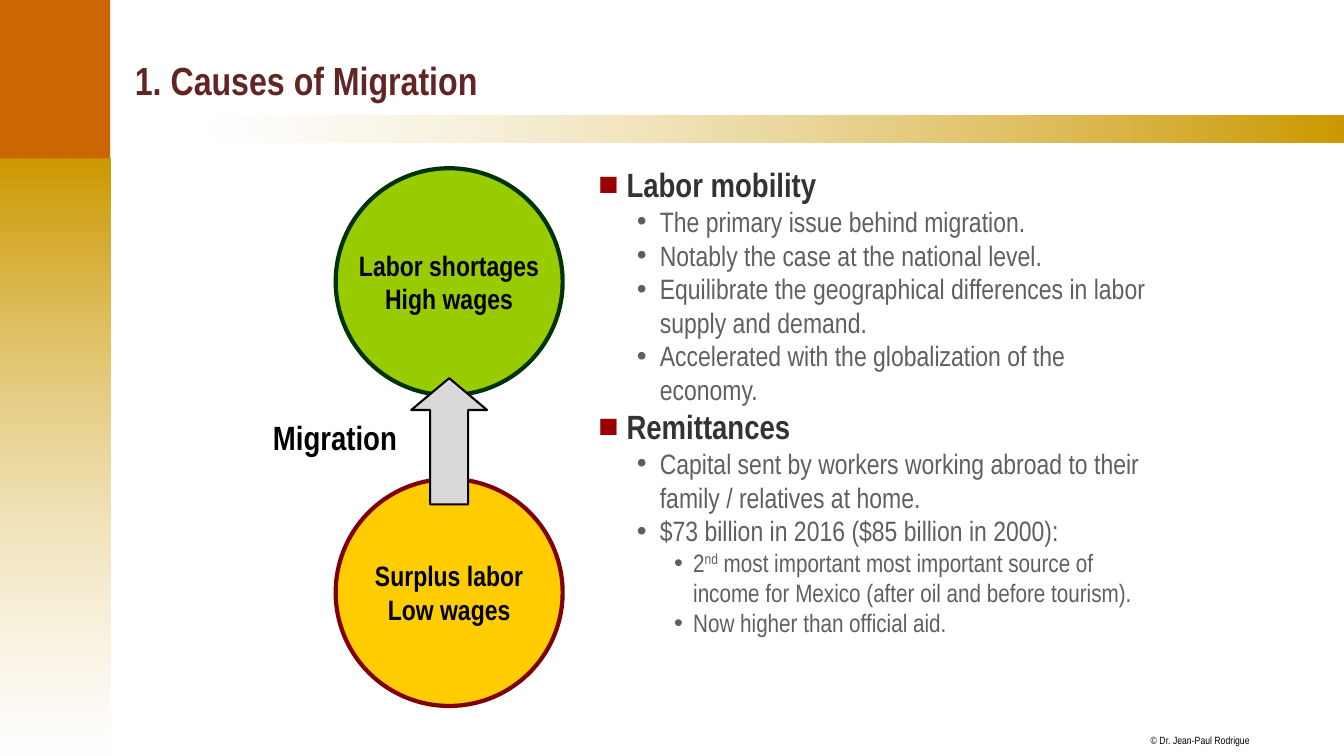
from lxml import etree
from pptx import Presentation
from pptx.dml.color import RGBColor
from pptx.enum.shapes import MSO_SHAPE
from pptx.enum.text import MSO_ANCHOR, PP_ALIGN
from pptx.oxml.ns import qn
from pptx.util import Cm, Pt

RECTANGLE, OVAL, UP_ARROW = MSO_SHAPE.RECTANGLE, MSO_SHAPE.OVAL, MSO_SHAPE.UP_ARROW
TOP, MIDDLE = MSO_ANCHOR.TOP, MSO_ANCHOR.MIDDLE
LEFT, CENTER = PP_ALIGN.LEFT, PP_ALIGN.CENTER
FONT = "Arial Narrow"

TITLE = "1. Causes of Migration"
CREDIT = "© Dr. Jean-Paul Rodrigue"
ARROW_LABEL = "Migration"
OUTLINE = [
    (0, ["Labor mobility"]),
    (1, ["The primary issue behind migration."]),
    (1, ["Notably the case at the national level."]),
    (1, ["Equilibrate the geographical differences in labor supply and demand."]),
    (1, ["Accelerated with the globalization of the economy."]),
    (0, ["Remittances"]),
    (1, ["Capital sent by workers working abroad to their family / relatives at home."]),
    (1, ["$73 billion in 2016 ($85 billion in 2000):"]),
    (2, ["2", "nd", " most important most important source of income for Mexico "
         "(after oil and before tourism)."]),
    (2, ["Now higher than official aid."]),
]
SUPERSCRIPTS = {"nd"}
# size, colour, bold, indent, hanging, bullet, bullet colour
LEVELS = [
    (24, "333333", True, 0.71, 0.71, "■", "990000"),
    (20, "5F5F5F", False, 1.55, 0.58, "•", "5F5F5F"),
    (18, "5F5F5F", False, 2.39, 0.48, "•", "5F5F5F"),
]
CIRCLES = [
    (["Labor shortages", "High wages"], 4.24, "99CC00", "003300"),
    (["Surplus labor", "Low wages"], 12.07, "FFCC00", "800000"),
]
CIRCLE_LEFT, CIRCLE_SIZE = 8.46, 5.72
ARROW_WIDTH, ARROW_HEIGHT, ARROW_TOP = 1.91, 3.18, 9.53
SIDE_WIDTH, SIDE_SPLIT, SLIDE_HEIGHT = 2.82, 3.99, 19.05


def color(code):
    return RGBColor.from_string(code)


def add_figure(page, kind, place, fill=None, line=None, weight=0):
    shape = page.shapes.add_shape(kind, *map(Cm, place))
    shape.shadow.inherit = False
    if fill:
        shape.fill.solid()
        shape.fill.fore_color.rgb = color(fill)
    if line:
        shape.line.color.rgb = color(line)
        shape.line.width = Pt(weight)
    else:
        shape.line.fill.background()
    return shape


def add_gradient(page, place, angle, stops):
    shape = add_figure(page, RECTANGLE, place)
    shape.fill.gradient()
    shape.fill.gradient_angle = angle
    for stop, (code, _) in zip(shape.fill.gradient_stops, stops):
        stop.color.rgb = color(code)
    for element, (_, opacity) in zip(shape.element.iter(qn("a:srgbClr")), stops):
        if opacity < 100:
            etree.SubElement(element, qn("a:alpha"), val=str(opacity * 1000))


def add_span(para, text, size, code, bold):
    span = para.add_run()
    span.text = text
    span.font.name, span.font.size, span.font.bold = FONT, Pt(size), bold
    span.font.color.rgb = color(code)
    return span


def write_lines(shape, lines, size, code, bold, align=LEFT, anchor=TOP, wrap=False):
    frame = shape.text_frame
    frame.word_wrap, frame.vertical_anchor = wrap, anchor
    for index, text in enumerate(lines):
        para = frame.add_paragraph() if index else frame.paragraphs[0]
        para.alignment = align
        add_span(para, text, size, code, bold)


def add_label(page, place, text, size, code, bold, **layout):
    box = page.shapes.add_textbox(*map(Cm, place))
    write_lines(box, [text], size, code, bold, **layout)
    return box.text_frame


def add_bullet(para, indent, hanging, mark, code):
    props = para._p.get_or_add_pPr()
    props.set("marL", str(Cm(indent)))
    props.set("indent", str(-Cm(hanging)))
    tint = etree.SubElement(props, qn("a:buClr"))
    etree.SubElement(tint, qn("a:srgbClr"), val=code)
    etree.SubElement(props, qn("a:buFont"), typeface="Arial")
    etree.SubElement(props, qn("a:buChar"), char=mark)


def add_outline(page, place):
    frame = page.shapes.add_textbox(*map(Cm, place)).text_frame
    frame.word_wrap = True
    for index, (level, texts) in enumerate(OUTLINE):
        size, code, bold, *bullet = LEVELS[level]
        para = frame.add_paragraph() if index else frame.paragraphs[0]
        para.level = level
        add_bullet(para, *bullet)
        for text in texts:
            span = add_span(para, text, size, code, bold)
            if text in SUPERSCRIPTS:
                span._r.get_or_add_rPr().set("baseline", "30000")


def main():
    """Build the migration slide and save it."""
    deck = Presentation()
    deck.slide_width, deck.slide_height = Cm(33.87), Cm(SLIDE_HEIGHT)
    page = deck.slides.add_slide(deck.slide_layouts[6])

    add_gradient(page, (-0.04, SIDE_SPLIT, SIDE_WIDTH, SLIDE_HEIGHT - SIDE_SPLIT), 270,
                 [("CC9900", 100), ("FFFFFF", 51)])
    add_gradient(page, (5.3, 2.92, 28.57, 0.67), 0, [("FFFFFF", 50), ("CC9900", 100)])
    credit = add_label(page, (29, 18.49, 2.51, 0.33), CREDIT, 7.5, "000000", False)
    credit.margin_left = credit.margin_right = credit.margin_top = credit.margin_bottom = 0
    add_figure(page, RECTANGLE, (-0.04, -0.02, SIDE_WIDTH, SIDE_SPLIT + 0.02), "CC6600")

    add_label(page, (3.15, 0.43, 30.15, 3.18), TITLE, 28, "632523", True,
              anchor=MIDDLE, wrap=True)
    add_outline(page, (14.83, 4.01, 14.43, 14.27))

    for lines, top, fill, line in CIRCLES:
        circle = add_figure(page, OVAL, (CIRCLE_LEFT, top, CIRCLE_SIZE, CIRCLE_SIZE),
                            fill, line, 3)
        write_lines(circle, lines, 20, "000000", True, align=CENTER, anchor=MIDDLE)

    arrow_left = CIRCLE_LEFT + (CIRCLE_SIZE - ARROW_WIDTH) / 2
    arrow = add_figure(page, UP_ARROW, (arrow_left, ARROW_TOP, ARROW_WIDTH, ARROW_HEIGHT),
                       "D9D9D9", "000000", 1.5)
    arrow.adjustments[0], arrow.adjustments[1] = 0.5, 0.42
    add_label(page, (6.63, 10.39, 3.66, 1.27), ARROW_LABEL, 24, "000000", True)

    deck.save("out.pptx")


if __name__ == "__main__":
    main()
